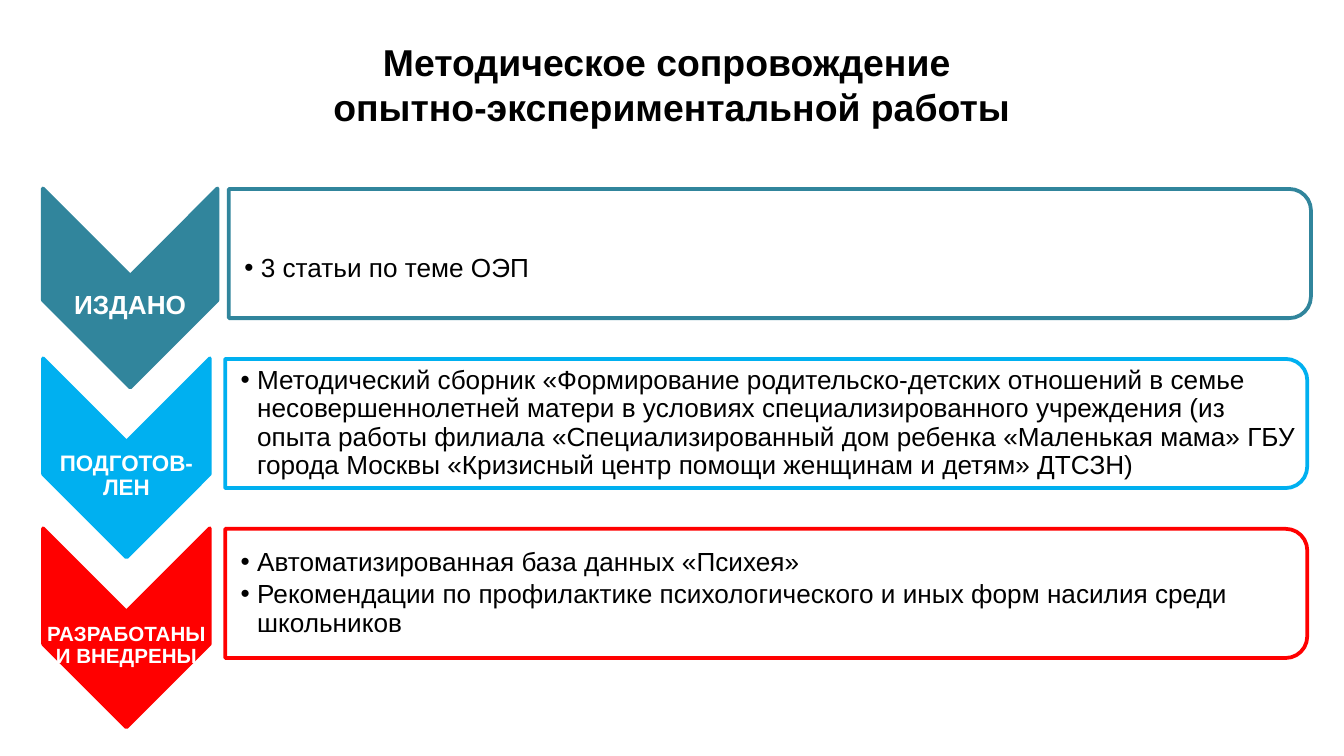
"""Build the slide on methodical support of the experimental work."""
from lxml.etree import SubElement
from pptx import Presentation
from pptx.dml.color import RGBColor
from pptx.enum.shapes import MSO_SHAPE
from pptx.enum.text import MSO_ANCHOR, PP_ALIGN
from pptx.oxml.ns import qn
from pptx.util import Cm, Pt

BLACK = RGBColor(0x00, 0x00, 0x00)
WHITE = RGBColor(0xFF, 0xFF, 0xFF)
TEAL = RGBColor(0x31, 0x85, 0x9C)
BLUE = RGBColor(0x00, 0xB0, 0xF0)
RED = RGBColor(0xFF, 0x00, 0x00)

FIRST_CHEVRON_Y = 5.44
FIRST_PANEL_Y = 4.79
ROW_PITCH = 3.21
CHEVRON_LENGTH = 3.76
PANEL_LENGTH, PANEL_HEIGHT = 20.45, 2.44
TEXT_WIDTH, TEXT_HEIGHT = 20.32, 2.2
BULLET_INDENT = Cm(0.31)

ROWS = [
    {"color": TEAL, "label": "ИЗДАНО", "size": 14, "width": 3.3,
     "chevron_x": 2.46, "panel_x": 14.55, "text_shift": 0.3,
     "items": ["3 статьи по теме ОЭП"]},
    {"color": BLUE, "label": "ПОДГОТОВ-ЛЕН", "size": 12, "width": 3.15,
     "chevron_x": 2.39, "panel_x": 14.48, "text_shift": 0,
     "items": ["Методический сборник «Формирование родительско-детских "
               "отношений в семье несовершеннолетней матери в условиях "
               "специализированного учреждения (из опыта работы филиала "
               "«Специализированный дом ребенка «Маленькая мама» ГБУ города "
               "Москвы «Кризисный центр помощи женщинам и детям» ДТСЗН)"]},
    {"color": RED, "label": "РАЗРАБОТАНЫ И ВНЕДРЕНЫ", "size": 11, "width": 3.15,
     "chevron_x": 2.39, "panel_x": 14.48, "text_shift": 0,
     "items": ["Автоматизированная база данных «Психея»",
               "Рекомендации по профилактике психологического и иных форм "
               "насилия среди школьников"]},
]


def set_attributes(target, values):
    """Set each named value on the target object."""
    for name, value in values.items():
        setattr(target, name, value)


def centered_box(x, y, width, height):
    """Return left, top, width and height of a box centred on a point."""
    return Cm(x - width / 2), Cm(y - height / 2), Cm(width), Cm(height)


def add_turned_shape(slide, kind, box, color, filled):
    """Add a preset shape turned clockwise by a quarter."""
    shape = slide.shapes.add_shape(kind, *box)
    shape.rotation = 90
    shape.shadow.inherit = False
    if filled:
        shape.fill.solid()
        shape.fill.fore_color.rgb = color
    else:
        shape.fill.background()
    shape.line.color.rgb = color
    shape.line.width = Pt(2)


def add_bullet(paragraph):
    """Give the paragraph a round bullet with a hanging indent."""
    properties = paragraph._p.get_or_add_pPr()
    properties.set("marL", str(BULLET_INDENT))
    properties.set("indent", str(-BULLET_INDENT))
    SubElement(properties, qn("a:buFont"), typeface="Arial")
    SubElement(properties, qn("a:buChar"), char="•")


def add_text(slide, box, texts, font, layout, left_inset=0.03, bulleted=False):
    """Add a wrapped text box, one paragraph for each text."""
    frame = slide.shapes.add_textbox(*box).text_frame
    set_attributes(frame, {
        "word_wrap": True, "vertical_anchor": MSO_ANCHOR.MIDDLE,
        "margin_left": Cm(left_inset), "margin_right": Cm(0.03),
        "margin_top": Cm(0.03), "margin_bottom": Cm(0.03)})
    for index, text in enumerate(texts):
        paragraph = frame.add_paragraph() if index else frame.paragraphs[0]
        paragraph.text = text
        set_attributes(paragraph, layout)
        if bulleted:
            add_bullet(paragraph)
        for run in paragraph.runs:
            run.font.color.rgb = font["color"]
            set_attributes(run.font, {
                "name": "Arial", "size": Pt(font["size"]), "bold": font["bold"]})


def add_row(slide, index, row):
    """Add a chevron with its label and the panel with its list."""
    chevron_y = FIRST_CHEVRON_Y + index * ROW_PITCH
    panel_y = FIRST_PANEL_Y + index * ROW_PITCH
    chevron_x, panel_x = row["chevron_x"], row["panel_x"]
    add_turned_shape(
        slide, MSO_SHAPE.CHEVRON,
        centered_box(chevron_x, chevron_y, CHEVRON_LENGTH, row["width"]),
        row["color"], True)
    add_text(
        slide, centered_box(chevron_x, chevron_y + 0.34, row["width"], 1.2),
        [row["label"]], {"size": row["size"], "color": WHITE, "bold": True},
        {"alignment": PP_ALIGN.CENTER, "line_spacing": 0.9})
    add_turned_shape(
        slide, MSO_SHAPE.ROUND_2_SAME_RECTANGLE,
        centered_box(panel_x, panel_y, PANEL_HEIGHT, PANEL_LENGTH),
        row["color"], False)
    add_text(
        slide, centered_box(panel_x - 0.05, panel_y + row["text_shift"],
                            TEXT_WIDTH, TEXT_HEIGHT),
        row["items"], {"size": 14, "color": BLACK, "bold": False},
        {"alignment": PP_ALIGN.LEFT, "line_spacing": 0.9, "space_after": Pt(2)},
        left_inset=0.28, bulleted=True)


def main():
    """Build and save the presentation."""
    presentation = Presentation()
    set_attributes(presentation, {"slide_width": Cm(25.4), "slide_height": Cm(14.28)})
    slide = presentation.slides.add_slide(presentation.slide_layouts[6])
    add_text(
        slide, (Cm(0), Cm(0.61), Cm(25.4), Cm(1.96)),
        ["Методическое сопровождение \vопытно-экспериментальной работы"],
        {"size": 20, "color": BLACK, "bold": True}, {"alignment": PP_ALIGN.CENTER})
    for index, row in enumerate(ROWS):
        add_row(slide, index, row)
    presentation.save("out.pptx")


if __name__ == "__main__":
    main()
